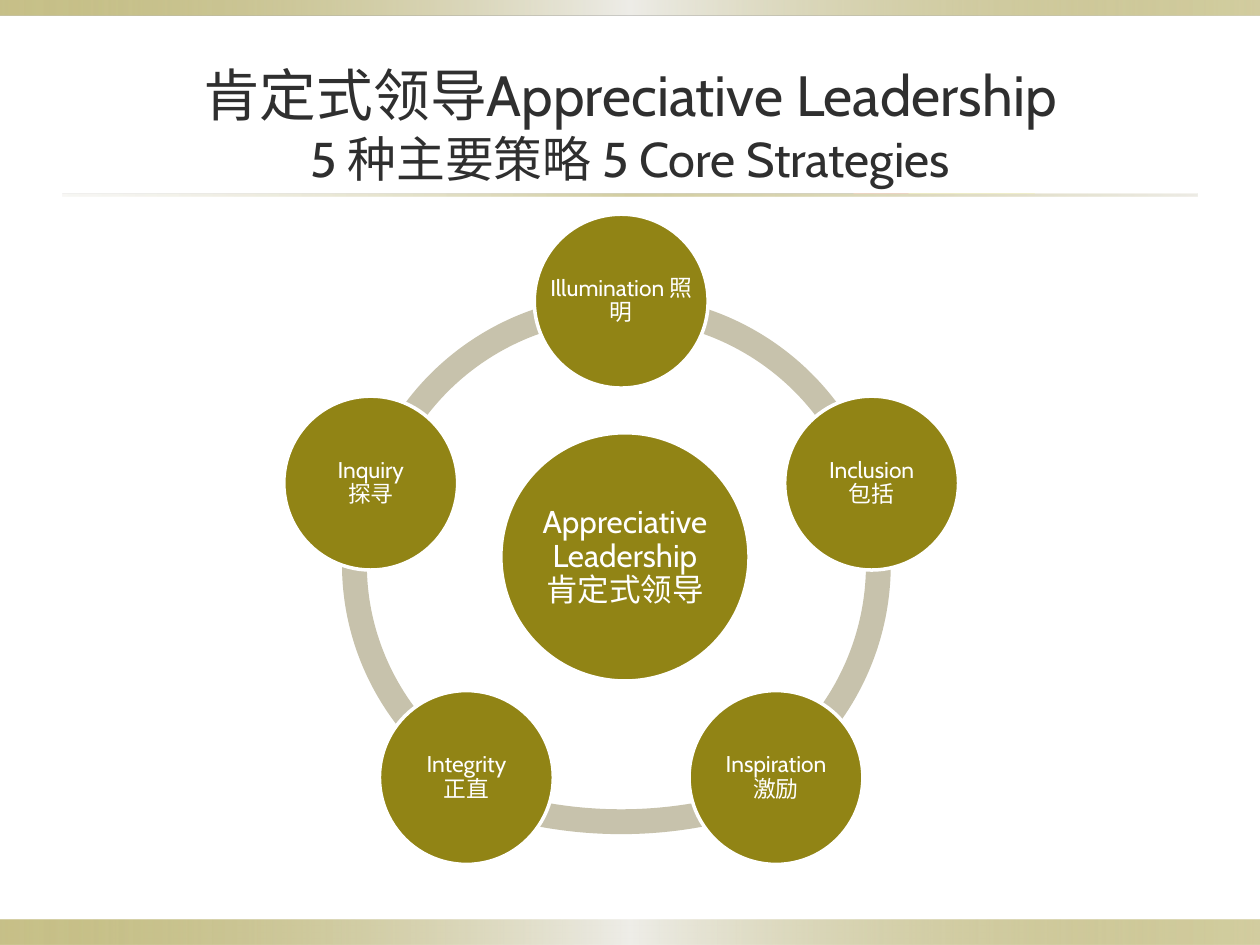
from math import cos, radians, sin

from lxml import etree
from pptx import Presentation
from pptx.dml.color import RGBColor
from pptx.enum.shapes import MSO_SHAPE
from pptx.enum.text import MSO_ANCHOR, MSO_AUTO_SIZE, PP_ALIGN
from pptx.oxml.ns import qn
from pptx.util import Inches, Pt

RECTANGLE, OVAL, ARC = MSO_SHAPE.RECTANGLE, MSO_SHAPE.OVAL, MSO_SHAPE.BLOCK_ARC
MIDDLE, CENTER, NO_AUTOFIT = MSO_ANCHOR.MIDDLE, PP_ALIGN.CENTER, MSO_AUTO_SIZE.NONE

FONT = "Cabin"
OLIVE, SAND, WHITE, DARK = "918415", "C7C2AC", "FFFFFF", "2F2F2F"
BAR_STOPS = [(0, OLIVE, 50), (50, "EEEDE8", 100), (100, OLIVE, 40)]
RULE_STOPS = [(0, "DCD9CC", 20), (50, OLIVE, 40), (100, "DCD9CC", 50)]

# Ring geometry: five nodes, clockwise from the top
RING_X, RING_Y, NODE_ORBIT, NODE_SIZE = 4.93, 4.48, 2.09, 1.38
RING_HEIGHT, RING_THICKNESS = 4.28, 0.046
FIRST_ANGLE, STEP = 270, 72
ARC_WIDTHS = [4.28, 4.28, 5.54, 4.43, 4.28]
STRATEGIES = ["Illumination 照明", "Inclusion\n包括", "Inspiration\n激励",
              "Integrity\n正直", "Inquiry\n探寻"]


def color(hex_string):
    return RGBColor.from_string(hex_string)


class SlideBuilder:
    """Holds the slide and draws elements in its style."""

    def __init__(self, slide):
        self.slide = slide

    def shape(self, kind, left, top, width, height):
        shape = self.slide.shapes.add_shape(
            kind, Inches(left), Inches(top), Inches(width), Inches(height))
        shape.shadow.inherit = False
        shape.line.fill.background()
        return shape

    def gradient_bar(self, left, top, width, height, stops):
        bar = self.shape(RECTANGLE, left, top, width, height)
        bar.fill.gradient()
        bar.fill.gradient_angle = 0
        stop_list = bar.element.spPr.find(".//" + qn("a:gsLst"))
        for old_stop in list(stop_list):
            stop_list.remove(old_stop)
        for position, hex_string, opacity in stops:
            stop = etree.SubElement(stop_list, qn("a:gs"), pos=str(position * 1000))
            tint = etree.SubElement(stop, qn("a:srgbClr"), val=hex_string)
            etree.SubElement(tint, qn("a:alpha"), val=str(opacity * 1000))

    def title(self, left, top, width, height, lines):
        title = self.slide.shapes.title
        title.left, title.top = Inches(left), Inches(top)
        title.width, title.height = Inches(width), Inches(height)
        frame = title.text_frame
        frame.auto_size = NO_AUTOFIT
        frame.vertical_anchor = MIDDLE
        paragraph = frame.paragraphs[0]
        paragraph.alignment = CENTER
        paragraph.font.name = FONT
        paragraph.font.color.rgb = color(DARK)
        for index, (text, size) in enumerate(lines):
            if index:
                paragraph.add_line_break()
            run = paragraph.add_run()
            run.text = text
            run.font.size = Pt(size)

    def ring_arc(self, center_x, center_y, width, height, start, end):
        arc = self.shape(ARC, center_x - width / 2, center_y - height / 2, width, height)
        # Adjustments count 60000ths of a degree in units of 100000
        arc.adjustments[0] = start % 360 * 0.6
        arc.adjustments[1] = end % 360 * 0.6
        arc.adjustments[2] = RING_THICKNESS
        arc.fill.solid()
        arc.fill.fore_color.rgb = color(SAND)

    def circle(self, center_x, center_y, diameter, text, size):
        circle = self.shape(OVAL, center_x - diameter / 2, center_y - diameter / 2,
                            diameter, diameter)
        circle.fill.solid()
        circle.fill.fore_color.rgb = color(OLIVE)
        circle.line.color.rgb = color(WHITE)
        circle.line.width = Pt(2)
        frame = circle.text_frame
        frame.word_wrap = True
        frame.vertical_anchor = MIDDLE
        # Negative insets let text run wider than the inscribed square
        frame.margin_left = frame.margin_right = Inches(-0.12)
        frame.margin_top = frame.margin_bottom = 0
        paragraph = frame.paragraphs[0]
        paragraph.text = text
        paragraph.alignment = CENTER
        paragraph.line_spacing = 0.9
        paragraph.font.name = FONT
        paragraph.font.size = Pt(size)
        paragraph.font.color.rgb = color(WHITE)


def main():
    presentation = Presentation()
    presentation.slide_width, presentation.slide_height = Inches(10), Inches(7.5)
    builder = SlideBuilder(presentation.slides.add_slide(presentation.slide_layouts[5]))

    # Bars and title
    builder.gradient_bar(0, 7.3, 10, 0.2, BAR_STOPS)
    builder.gradient_bar(0, 0, 10, 0.12, BAR_STOPS)
    builder.gradient_bar(0.5, 1.54, 9, 0.02, RULE_STOPS)
    builder.title(0.5, 0.42, 9, 1.12, [("肯定式领导Appreciative Leadership", 32.4),
                                       ("5 种主要策略 5 Core Strategies", 27.9)])

    # Ring arcs, then the circles over them
    angles = [FIRST_ANGLE + STEP * index for index in range(len(STRATEGIES))]
    for angle, width in zip(angles, ARC_WIDTHS):
        builder.ring_arc(RING_X, RING_Y, width, RING_HEIGHT, angle, angle + STEP)
    builder.circle(4.96, 4.42, 1.97, "Appreciative Leadership\n肯定式领导", 18)
    for angle, text in zip(angles, STRATEGIES):
        builder.circle(RING_X + NODE_ORBIT * cos(radians(angle)),
                       RING_Y + NODE_ORBIT * sin(radians(angle)), NODE_SIZE, text, 13)

    presentation.save("out.pptx")


if __name__ == "__main__":
    main()
